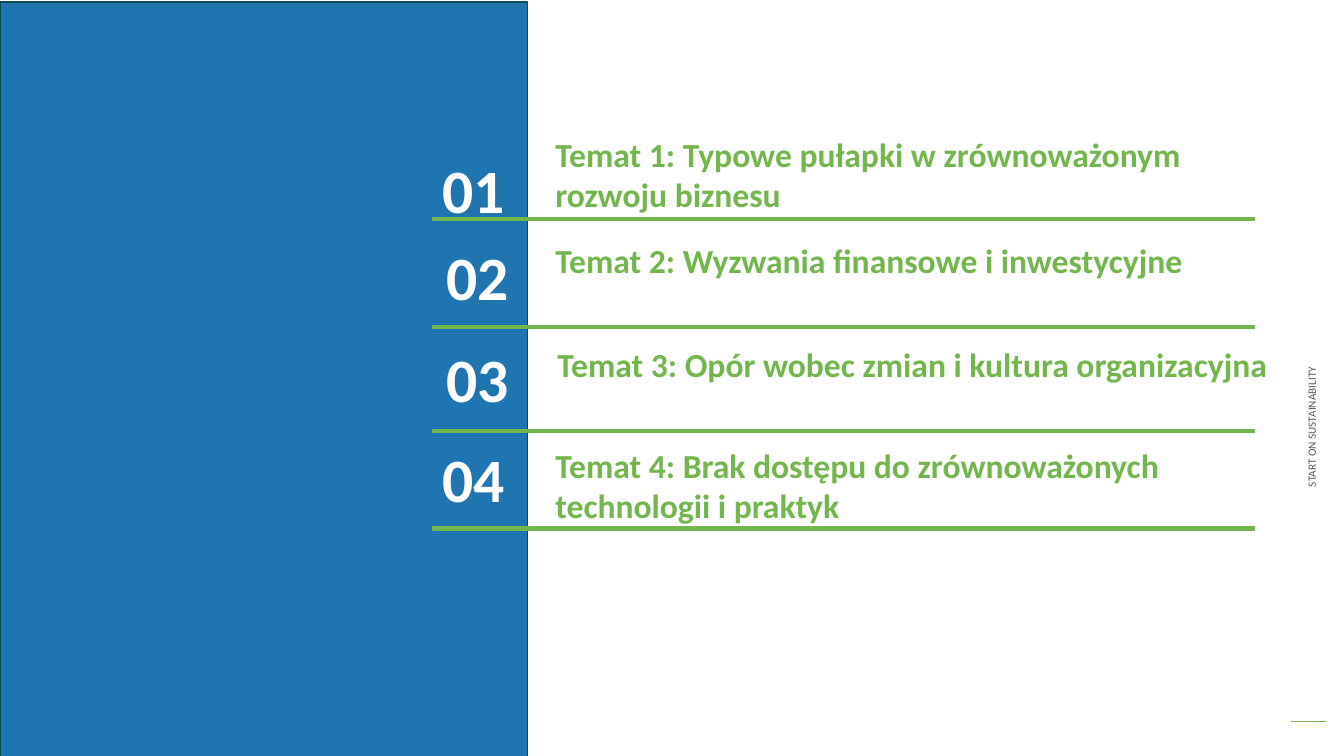
from pptx import Presentation
from pptx.dml.color import RGBColor
from pptx.enum.shapes import MSO_CONNECTOR, MSO_SHAPE
from pptx.enum.text import MSO_ANCHOR
from pptx.oxml.ns import qn
from pptx.util import Emu, Pt

SCALE = 9144  # EMU per px, 100 px to the inch
COLORS = {"blue": "1E75B0", "edge": "054F50", "green": "73B64B",
          "white": "FFFFFF", "gray": "595959"}

# number, title, number x and y, title x, y and width, rule y
TOPICS = [
    ("01", "Temat 1: Typowe pułapki w zrównoważonym rozwoju biznesu",
     429, 124, 541, 128, 718, 216),
    ("02", "Temat 2: Wyzwania finansowe i inwestycyjne",
     433, 210, 541, 233, 718, 323),
    ("03", "Temat 3: Opór wobec zmian i kultura organizacyjna",
     433, 311, 543, 336, 764, 426),
    ("04", "Temat 4: Brak dostępu do zrównoważonych technologii i praktyk",
     429, 411, 541, 436, 718, 523),
]


def px(*sizes):
    return [Emu(size * SCALE) for size in sizes]


def color(name):
    return RGBColor.from_string(COLORS[name])


def add_text(slide, box, text, size, ink, bold=False, spacing=None, turn=0):
    shape = slide.shapes.add_textbox(*px(*box))
    shape.rotation = turn
    frame = shape.text_frame
    frame.word_wrap = True
    frame.vertical_anchor = MSO_ANCHOR.TOP
    para = frame.paragraphs[0]
    if spacing:
        para.line_spacing = spacing
    run = para.add_run()
    run.text = text
    font = run.font
    font.name, font.size, font.bold = "Calibri", Pt(size), bold
    font.color.rgb = color(ink)


def add_rect(slide, box, fill, edge):
    shape = slide.shapes.add_shape(MSO_SHAPE.RECTANGLE, *px(*box))
    shape.shadow.inherit = False
    shape.fill.solid()
    shape.fill.fore_color.rgb = color(fill)
    shape.line.color.rgb = color(edge)
    shape.line.width = Pt(1)


def add_side(slide, box):
    """Place the upright running title and the short line below it."""
    x, y, w, h = box
    long, thick = 446, 24
    mid = x + 21
    add_text(slide, (mid - long // 2, y + (h - long - thick) // 2, long, thick),
             "START ON SUSTAINABILITY", 8, "gray", turn=270)
    line = slide.shapes.add_connector(
        MSO_CONNECTOR.STRAIGHT, *px(x, y + h, x + w, y + h))
    line.line.color.rgb = color("green")
    line.line.width = Pt(1)
    props = line._element.spPr
    props.append(props.makeelement(qn("a:effectLst"), {}))


def add_topics(slide, box):
    """Place the numbered topics, each with a rule, in the given box."""
    left, top, width = box
    for num, title, num_x, num_y, x, y, w, rule in TOPICS:
        add_text(slide, (left + x - 429, top + y - 124, w, 37),
                 title, 24, "green", bold=True)
        add_text(slide, (left + num_x - 429, top + num_y - 124, 135, 105),
                 num, 44, "white", bold=True, spacing=1.3)
        add_rect(slide, (left, top + rule - 124, width, 3), "green", "green")


def main():
    deck = Presentation()
    deck.slide_width, deck.slide_height = px(1333, 750)
    slide = deck.slides.add_slide(deck.slide_layouts[6])
    add_side(slide, (1280, 270, 35, 446))
    add_rect(slide, (0, 2, 523, 750), "blue", "edge")
    add_topics(slide, (429, 124, 815))
    deck.save("out.pptx")


if __name__ == "__main__":
    main()
